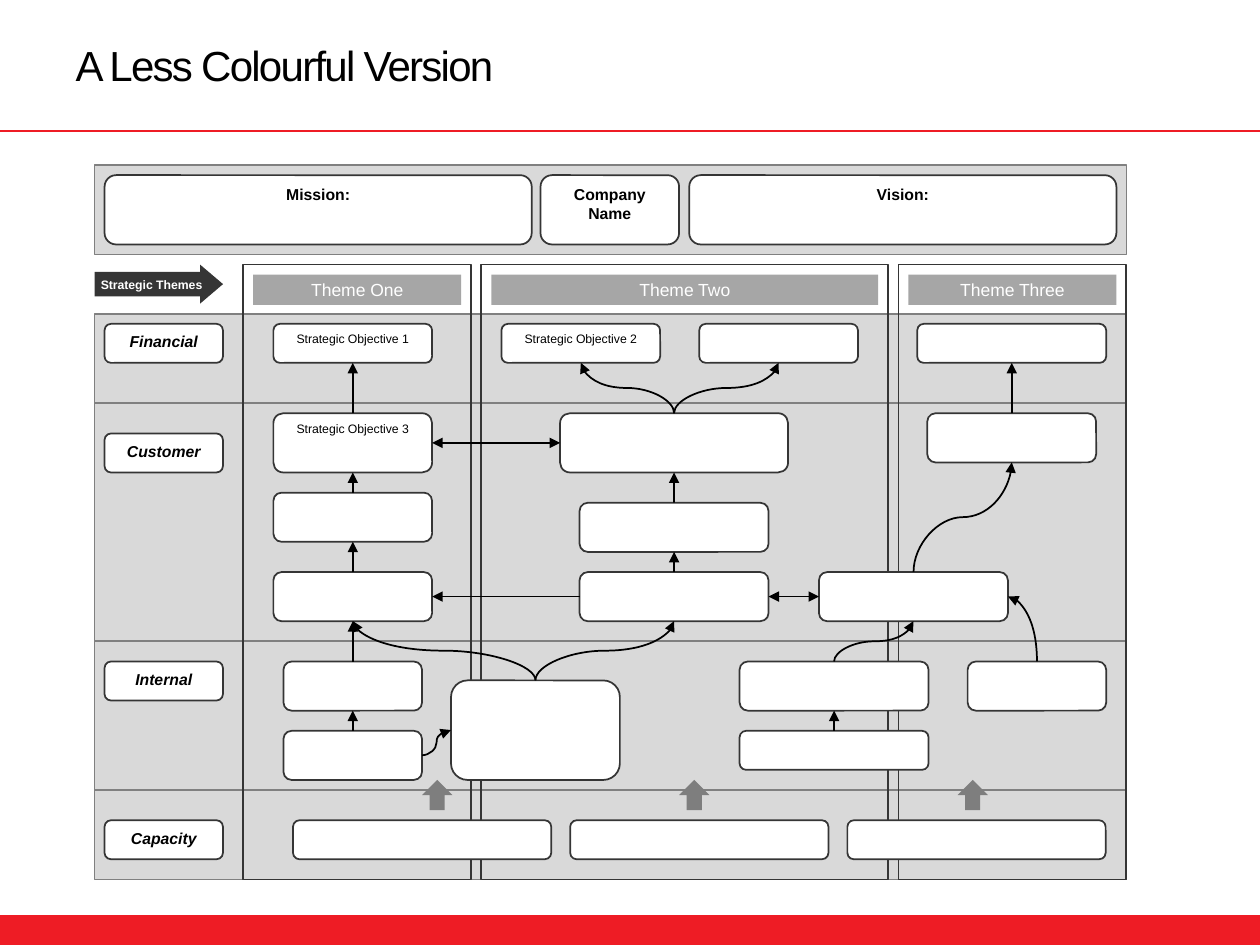
from dataclasses import dataclass

import pptx
import pptx.dml.color
import pptx.enum.shapes
import pptx.enum.text
import pptx.oxml.ns
import pptx.oxml.xmlchemy
import pptx.util
from pptx.util import Inches


@dataclass(frozen=True)
class Theme:
    font: str = "Arial"
    red: str = "EE1C25"
    white: str = "FFFFFF"
    black: str = "000000"
    dark: str = "353535"
    band: str = "D9D9D9"
    band_edge: str = "808080"
    header: str = "A6A6A6"
    up_arrow: str = "7E7E7E"
    title_size: int = 24
    header_size: int = 10
    label_size: int = 9
    small_size: int = 7


theme = Theme()
rgb = pptx.dml.color.RGBColor.from_string
SHAPE = pptx.enum.shapes.MSO_SHAPE
CONNECTOR = pptx.enum.shapes.MSO_CONNECTOR
ANCHOR = pptx.enum.text.MSO_ANCHOR
ALIGN = pptx.enum.text.PP_ALIGN
TOP, LEFT, BOTTOM, RIGHT = range(4)

prs = pptx.Presentation()
prs.slide_width, prs.slide_height = Inches(10), Inches(7.5)
slide = prs.slides.add_slide(prs.slide_layouts[5])


def add_block(kind, left, top, width, height, fill=None, line=None, text="",
              size=theme.label_size, color=theme.black, bold=False, italic=False,
              anchor=ANCHOR.TOP, insets=(0.1, 0.05)):
    block = slide.shapes.add_shape(
        kind, Inches(left), Inches(top), Inches(width), Inches(height))
    block.shadow.inherit = False
    if fill:
        block.fill.solid()
        block.fill.fore_color.rgb = rgb(fill)
    else:
        block.fill.background()
    if line:
        block.line.color.rgb = rgb(line)
        block.line.width = pptx.util.Pt(1)
    else:
        block.line.fill.background()
    if text:
        frame = block.text_frame
        frame.text = text
        frame.word_wrap = True
        frame.vertical_anchor = anchor
        frame.margin_left = frame.margin_right = Inches(insets[0])
        frame.margin_top = frame.margin_bottom = Inches(insets[1])
        paragraph = frame.paragraphs[0]
        paragraph.alignment = ALIGN.CENTER
        font = paragraph.runs[0].font
        font.name, font.size = theme.font, pptx.util.Pt(size)
        font.bold, font.italic = bold, italic
        font.color.rgb = rgb(color)
    return block


def style_line(line, color, width=1, ends=()):
    """Colour a connector, drop its shadow and put arrowheads on the given ends."""
    line.line.color.rgb = rgb(color)
    line.line.width = pptx.util.Pt(width)
    outline = line.line._get_or_add_ln()
    for end in ends:
        head = outline.makeelement(pptx.oxml.ns.qn(f"a:{end}"), {"type": "triangle"})
        outline.append(head)
    properties = line._element.spPr
    properties.append(properties.makeelement(pptx.oxml.ns.qn("a:effectLst"), {}))


# Page frame and title
add_block(SHAPE.RECTANGLE, 0, 7.27, 10, 0.24, theme.red, theme.red)
rule = slide.shapes.add_connector(
    CONNECTOR.STRAIGHT, Inches(0), Inches(1.04), Inches(10), Inches(1.04))
style_line(rule, theme.red, 1.5)

title = slide.shapes.title
title.left, title.top = Inches(0.5), Inches(0.15)
title.width, title.height = Inches(7.29), Inches(0.72)
title_frame = title.text_frame
title_frame.text = "A Less Colourful Version"
title_frame.auto_size = pptx.enum.text.MSO_AUTO_SIZE.NONE
title_frame.vertical_anchor = ANCHOR.MIDDLE
title_frame.margin_top = title_frame.margin_bottom = 0
title_frame.paragraphs[0].alignment = ALIGN.LEFT
title_run = title_frame.paragraphs[0].runs[0]
title_run.font.name = theme.font
title_run.font.size = pptx.util.Pt(theme.title_size)
title_run.font.color.rgb = rgb(theme.black)
title_run._r.get_or_add_rPr().set("spc", "-100")

# Perspective bands, then the theme columns over them
for top, height in [(1.31, 0.71), (2.49, 0.71), (3.2, 1.89), (5.09, 1.18), (6.27, 0.71)]:
    add_block(SHAPE.RECTANGLE, 0.75, top, 8.19, height, theme.band, theme.band_edge)

columns = [("Theme One", 1.93, 1.81), ("Theme Two", 3.82, 3.23), ("Theme Three", 7.13, 1.81)]
for name, left, width in columns:
    add_block(SHAPE.RECTANGLE, left, 2.1, width, 4.88, line=theme.dark)
    add_block(SHAPE.RECTANGLE, left + 0.08, 2.18, width - 0.16, 0.24, theme.header,
              text=name, size=theme.header_size, color=theme.white, anchor=ANCHOR.MIDDLE)

for name, left, width in [("Mission:", 0.83, 3.39), ("Company Name", 4.29, 1.1),
                          ("Vision:", 5.47, 3.39)]:
    add_block(SHAPE.ROUNDED_RECTANGLE, left, 1.39, width, 0.55, theme.white, theme.dark,
              name, bold=True)

for name, top in [("Financial", 2.57), ("Customer", 3.44), ("Internal", 5.25),
                  ("Capacity", 6.51)]:
    add_block(SHAPE.ROUNDED_RECTANGLE, 0.83, top, 0.94, 0.31, theme.white, theme.dark,
              name, bold=True, italic=True)

themes_arrow = add_block(
    SHAPE.RIGHT_ARROW, 0.75, 2.1, 1.02, 0.31, theme.dark, text="Strategic Themes",
    size=theme.small_size, color=theme.white, bold=True, anchor=ANCHOR.MIDDLE,
    insets=(0, 0.05))
themes_arrow.adjustments[0], themes_arrow.adjustments[1] = 0.631, 0.588

# Objectives: name, centre x, top, width, height, text
objectives = {}
for name, center, top, width, height, text in [
    ("financial 1", 2.8, 2.57, 1.26, 0.31, "Strategic Objective 1"),
    ("financial 2", 4.61, 2.57, 1.26, 0.31, "Strategic Objective 2"),
    ("financial 3", 6.18, 2.57, 1.26, 0.31, ""),
    ("financial 4", 8.03, 2.57, 1.5, 0.31, ""),
    ("customer 1", 2.8, 3.28, 1.26, 0.47, "Strategic Objective 3"),
    ("customer 2", 2.8, 3.91, 1.26, 0.39, ""),
    ("customer 3", 2.8, 4.54, 1.26, 0.39, ""),
    ("customer 4", 5.35, 3.28, 1.81, 0.47, ""),
    ("customer 5", 5.35, 3.99, 1.5, 0.39, ""),
    ("customer 6", 5.35, 4.54, 1.5, 0.39, ""),
    ("customer 7", 7.25, 4.54, 1.5, 0.39, ""),
    ("customer 8", 8.03, 3.28, 1.34, 0.39, ""),
    ("internal 1", 2.8, 5.25, 1.1, 0.39, ""),
    ("internal 2", 2.8, 5.8, 1.1, 0.39, ""),
    ("internal 3", 4.25, 5.4, 1.34, 0.79, ""),
    ("internal 4", 6.62, 5.25, 1.5, 0.39, ""),
    ("internal 5", 6.62, 5.8, 1.5, 0.31, ""),
    ("internal 6", 8.23, 5.25, 1.1, 0.39, ""),
    ("capacity 1", 3.35, 6.51, 2.05, 0.31, ""),
    ("capacity 2", 5.55, 6.51, 2.05, 0.31, ""),
    ("capacity 3", 7.75, 6.51, 2.05, 0.31, ""),
]:
    objectives[name] = add_block(
        SHAPE.ROUNDED_RECTANGLE, center - width / 2, top, width, height,
        theme.white, theme.dark, text, size=theme.small_size, insets=(0.04, 0.04))

# Straight links: source, side, target, side, arrowheads
one_way, two_way = ("tailEnd",), ("headEnd", "tailEnd")
upward = [("customer 3", "customer 2"), ("customer 2", "customer 1"),
          ("customer 1", "financial 1"), ("customer 6", "customer 5"),
          ("customer 5", "customer 4"), ("customer 8", "financial 4"),
          ("internal 5", "internal 4"), ("internal 1", "customer 3"),
          ("internal 2", "internal 1")]
sideways = [("customer 6", "customer 3", one_way), ("customer 4", "customer 1", two_way),
            ("customer 7", "customer 6", two_way)]
straight = [(source, TOP, target, BOTTOM, one_way) for source, target in upward]
straight += [(source, LEFT, target, RIGHT, ends) for source, target, ends in sideways]
for source, source_side, target, target_side, ends in straight:
    link = slide.shapes.add_connector(CONNECTOR.STRAIGHT, 0, 0, 0, 0)
    link.begin_connect(objectives[source], source_side)
    link.end_connect(objectives[target], target_side)
    style_line(link, theme.black, ends=ends)

# Curved links; those leaving a top side are turned so that they start upwards
for source, source_side, target, target_side in [
    ("customer 4", TOP, "financial 2", BOTTOM), ("customer 4", TOP, "financial 3", BOTTOM),
    ("customer 7", TOP, "customer 8", BOTTOM), ("internal 3", TOP, "customer 6", BOTTOM),
    ("internal 3", TOP, "customer 3", BOTTOM), ("internal 4", TOP, "customer 7", BOTTOM),
    ("internal 6", TOP, "customer 7", RIGHT), ("internal 2", RIGHT, "internal 3", LEFT),
]:
    link = slide.shapes.add_connector(CONNECTOR.CURVE, 0, 0, 0, 0)
    link.begin_connect(objectives[source], source_side)
    link.end_connect(objectives[target], target_side)
    style_line(link, theme.black, ends=one_way)
    if source_side == TOP:
        rightward = link.end_x > link.begin_x
        middle_x, middle_y = link.left + link.width // 2, link.top + link.height // 2
        link.width, link.height = link.height, link.width
        link.left, link.top = middle_x - link.width // 2, middle_y - link.height // 2
        transform = link._element.spPr.find(pptx.oxml.ns.qn("a:xfrm"))
        transform.set("rot", str((90 if rightward else 270) * 60000))
        transform.set("flipH", str(int(rightward)))
        transform.set("flipV", "1")
    if target_side == RIGHT:
        geometry = link._element.spPr.find(pptx.oxml.ns.qn("a:prstGeom"))
        geometry.set("prst", "curvedConnector2")

# Arrows rising from the capacity band
for left in (3.35, 5.39, 7.6):
    riser = add_block(SHAPE.RIGHT_ARROW, left, 6.19, 0.24, 0.24, theme.up_arrow)
    riser.rotation = 270

prs.save("out.pptx")
